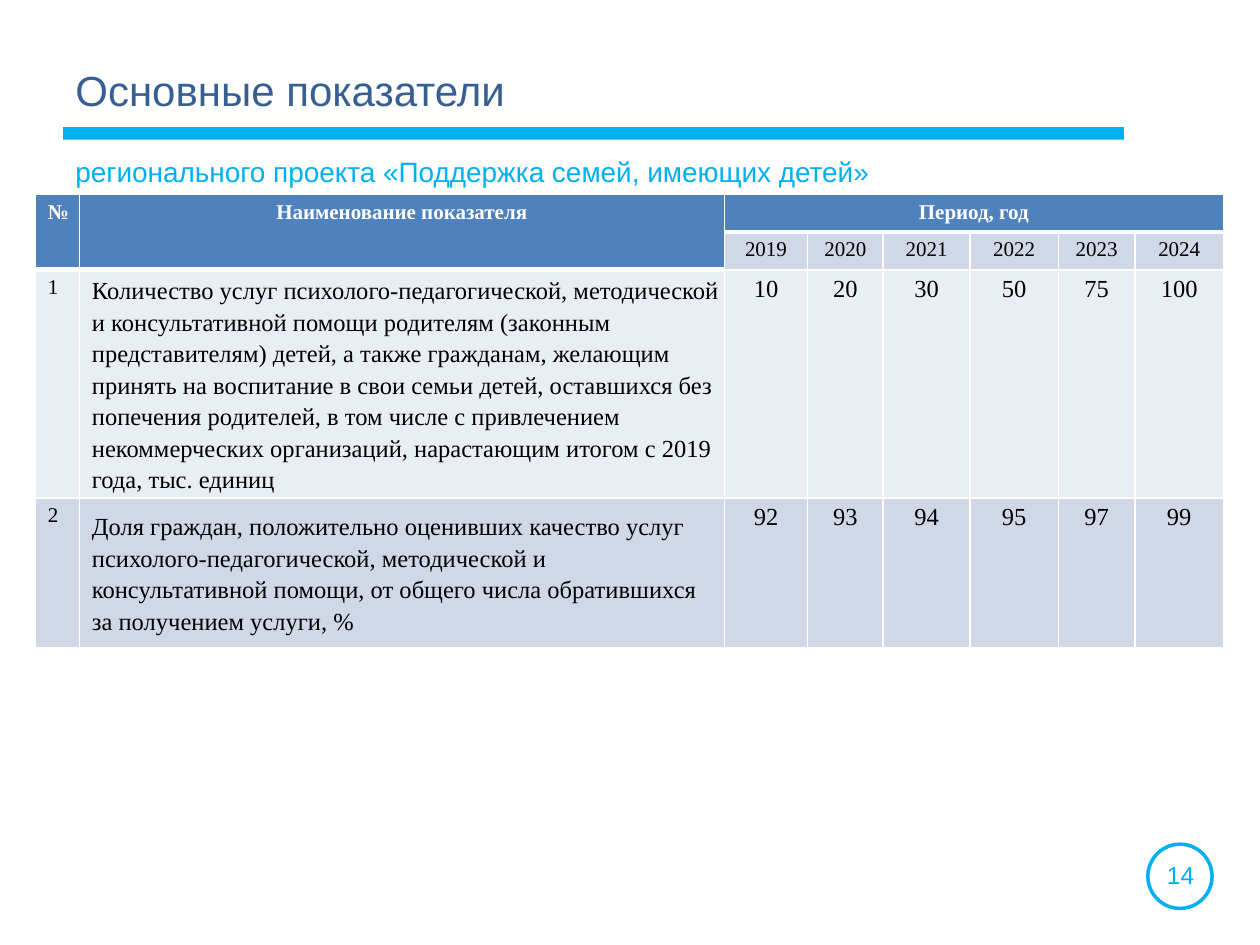
from lxml import etree
from pptx import Presentation
from pptx.dml.color import RGBColor
from pptx.enum import shapes, text
from pptx.oxml.ns import qn
from pptx.util import Inches, Pt

ACCENT, TITLE, WHITE, BLACK = "00B0F0", "376092", "FFFFFF", "000000"
HEADER, LIGHT, DARK = "4F81BD", "E9EDF4", "D0D8E8"
SERIF = "Times New Roman"
CENTER = text.PP_ALIGN.CENTER

COLUMNS = [0.35, 5.12, 0.66, 0.6, 0.69, 0.7, 0.61, 0.7]
ROWS = [0.29, 0.3, 1.81, 1.19]
YEARS = range(2019, 2025)
INDICATORS = [
    ("Количество услуг психолого-педагогической, методической и консультативной "
     "помощи родителям (законным представителям) детей, а также гражданам, "
     "желающим принять на воспитание в свои семьи детей, оставшихся без попечения "
     "родителей, в том числе с привлечением некоммерческих организаций, "
     "нарастающим итогом с 2019 года, тыс. единиц",
     [10, 20, 30, 50, 75, 100], LIGHT),
    ("Доля граждан, положительно оценивших качество услуг "
     "психолого-педагогической, методической и консультативной помощи, от общего "
     "числа обратившихся за получением услуги, %",
     [92, 93, 94, 95, 97, 99], DARK),
]


def color(value):
    return RGBColor.from_string(value)


def write(frame, words, size, tint, font="Arial", bold=False, align=None):
    para = frame.paragraphs[0]
    para.alignment = align
    span = para.add_run()
    span.text = str(words)
    style = {"size": Pt(size), "name": font, "bold": bold}
    for name, value in style.items():
        setattr(span.font, name, value)
    span.font.color.rgb = color(tint)
    return para


def add_shape(page, kind, place, fill=None, line=None):
    shape = page.shapes.add_shape(kind, *map(Inches, place))
    shape.shadow.inherit = False
    if fill:
        shape.fill.solid()
        shape.fill.fore_color.rgb = color(fill)
    else:
        shape.fill.background()
    if line:
        shape.line.color.rgb = color(line)
        shape.line.width = Pt(2)
    else:
        shape.line.fill.background()


def add_text(page, place, words, size, tint, **layout):
    frame = page.shapes.add_textbox(*map(Inches, place)).text_frame
    frame.word_wrap = True
    align = layout.pop("align", None)
    for name, value in layout.items():
        setattr(frame, name, value)
    write(frame, words, size, tint, align=align)


def set_borders(cell, bottom=1):
    props = cell._tc.get_or_add_tcPr()
    widths = {"a:lnL": 1, "a:lnR": 1, "a:lnT": 1, "a:lnB": bottom}
    for position, (tag, width) in enumerate(widths.items()):
        line = etree.Element(qn(tag), w=str(Pt(width)))
        fill = etree.SubElement(line, qn("a:solidFill"))
        etree.SubElement(fill, qn("a:srgbClr"), val=WHITE)
        props.insert(position, line)


def fill_cell(cell, words, fill, size=12, tint=BLACK, bold=False, align=CENTER):
    cell.fill.solid()
    cell.fill.fore_color.rgb = color(fill)
    return write(cell.text_frame, words, size, tint, SERIF, bold, align)


def add_header(table):
    for words, first, last in [("№", (0, 0), (1, 0)),
                               ("Наименование показателя", (0, 1), (1, 1)),
                               ("Период, год", (0, 2), (0, 7))]:
        cell = table.cell(*first)
        cell.merge(table.cell(*last))
        fill_cell(cell, words, HEADER, tint=WHITE, bold=True)
    for column, year in enumerate(YEARS, 2):
        fill_cell(table.cell(1, column), year, DARK)


def add_indicator(table, row, number, name, values, fill):
    fill_cell(table.cell(row, 0), number, fill, align=None)
    cell = table.cell(row, 1)
    para = fill_cell(cell, name, fill, size=14, align=None)
    para.line_spacing = Pt(18)
    para._p.get_or_add_pPr().set("marL", str(Inches(0.08)))
    layout = {"margin_left": Inches(0.02), "margin_right": Inches(0.02),
              "margin_top": 0, "margin_bottom": 0,
              "vertical_anchor": text.MSO_ANCHOR.MIDDLE}
    for key, value in layout.items():
        setattr(cell, key, value)
    for column, value in enumerate(values, 2):
        fill_cell(table.cell(row, column), value, fill, size=14)


def add_indicator_table(page):
    place = (0.28, 1.54, sum(COLUMNS), sum(ROWS))
    table = page.shapes.add_table(len(ROWS), len(COLUMNS),
                                  *map(Inches, place)).table
    for column, width in zip(table.columns, COLUMNS):
        column.width = Inches(width)
    for row, height in zip(table.rows, ROWS):
        row.height = Inches(height)
    add_header(table)
    for number, indicator in enumerate(INDICATORS, 1):
        add_indicator(table, number + 1, number, *indicator)
    for row in range(len(ROWS)):
        for column in range(len(COLUMNS)):
            header = row == 0 or (row == 1 and column < 2)
            set_borders(table.cell(row, column), bottom=3 if header else 1)


def main():
    deck = Presentation()
    deck.slide_width, deck.slide_height = Inches(10), Inches(7.5)
    page = deck.slides.add_slide(deck.slide_layouts[6])
    add_shape(page, shapes.MSO_SHAPE.RECTANGLE, (0.5, 1.01, 8.42, 0.1), fill=ACCENT)
    add_shape(page, shapes.MSO_SHAPE.OVAL, (9.11, 6.7, 0.51, 0.51), line=ACCENT)
    add_text(page, (9.08, 6.77, 0.58, 0.34), 14, 14, ACCENT, align=CENTER,
             vertical_anchor=text.MSO_ANCHOR.MIDDLE)
    add_text(page, (0.5, 1.15, 8.56, 0.49),
             "регионального проекта «Поддержка семей, имеющих детей»", 16, ACCENT,
             margin_top=Inches(0.08))
    add_text(page, (0.5, 0.43, 7.79, 0.64), "Основные показатели", 24, TITLE,
             margin_top=Inches(0.08))
    add_indicator_table(page)
    deck.save("out.pptx")


if __name__ == "__main__":
    main()
